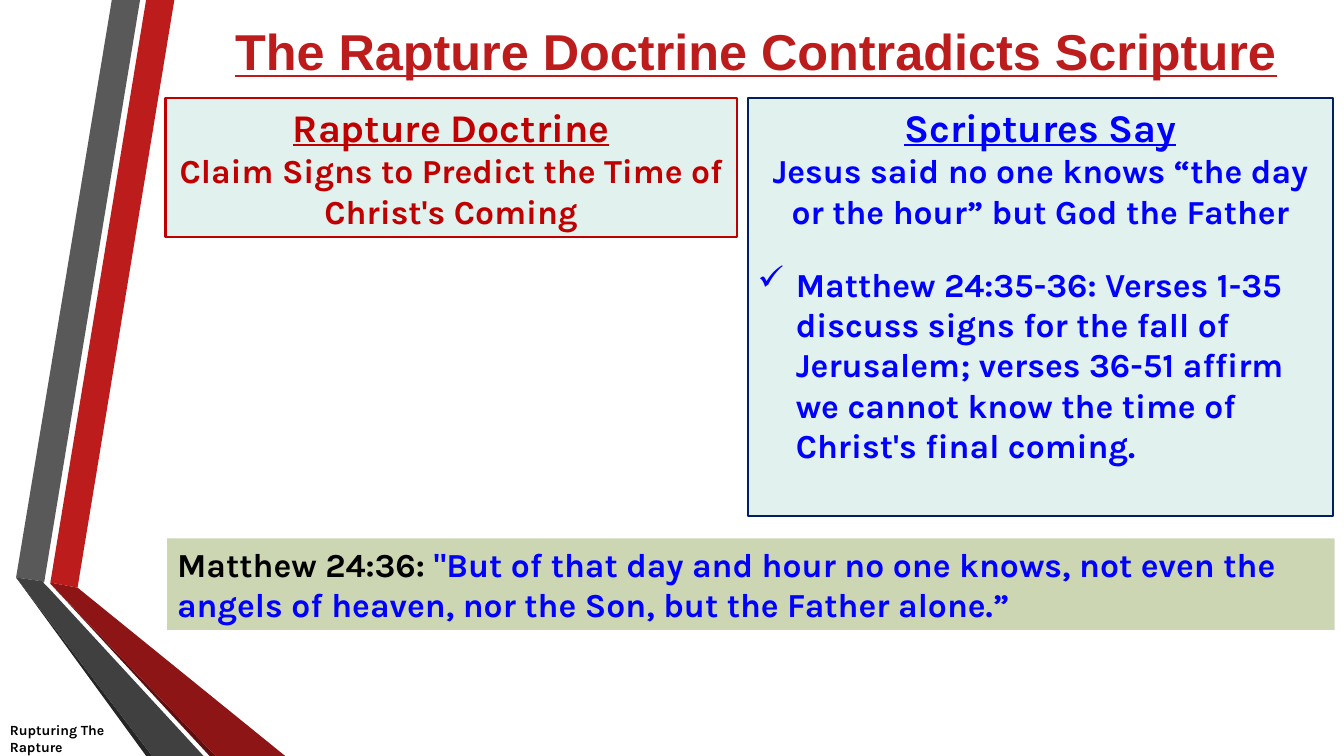
from lxml import etree
from pptx import Presentation
from pptx.dml.color import RGBColor
from pptx.enum.shapes import MSO_SHAPE
from pptx.enum.text import MSO_ANCHOR, PP_ALIGN
from pptx.oxml.ns import qn
from pptx.util import Inches, Pt

RECT = MSO_SHAPE.RECTANGLE
LEFT, CENTER = PP_ALIGN.LEFT, PP_ALIGN.CENTER
TOP, MIDDLE = MSO_ANCHOR.TOP, MSO_ANCHOR.MIDDLE

# Grid of 160 columns by 90 rows
COLS, ROWS = 160, 90
CELL = Inches(13.3333) / COLS

RED, DEEP, BLUE, NAVY = "BC1C1C", "C00000", "0000FF", "002060"
MINT, OLIVE, BLACK = "E1F1ED", "9BAF68", "000000"

# Ribbon bands: fill and corners in grid cells
BANDS = [
    (RED, [(6, 69.36), (9.24, 69.96), (20.76, 0), (17.4, 0)]),
    ("595959", [(16.68, 0), (13.32, 0), (1.92, 68.76), (5.28, 69.24)]),
    ("262626", [(1.92, 68.76), (17.4, 90), (18.12, 90)]),
    ("5E0E0E", [(6, 69.48), (24.96, 90), (25.68, 90)]),
    ("8D1515", [(6, 69.48), (25.68, 90), (33.96, 90), (9.24, 69.96),
                (6, 69.36)]),
    ("404040", [(24.24, 90), (5.76, 69.96), (5.16, 69.36), (5.28, 69.24),
                (1.92, 68.76), (18.12, 90)]),
]


def grid(*cells):
    return [round(c * CELL) for c in cells]


def color(code):
    return RGBColor.from_string(code)


def paint(shape, fill, line=None):
    shape.shadow.inherit = False
    shape.fill.solid()
    shape.fill.fore_color.rgb = color(fill)
    if line:
        shape.line.color.rgb = color(line)
        shape.line.width = Pt(1.5)
    else:
        shape.line.fill.background()


def style(run, size, tint, under=False, face="Karla"):
    font = run.font
    font.name, font.size, font.bold = face, Pt(size), True
    font.underline = under
    font.color.rgb = color(tint)


def write(shape, lines, size, tint, align=LEFT, anchor=TOP):
    frame = shape.text_frame
    frame.word_wrap = True
    frame.vertical_anchor = anchor
    frame.text = "\n".join(lines)
    for para in frame.paragraphs:
        para.alignment = align
        for run in para.runs:
            style(run, size, tint)
    return frame.paragraphs


def add_band(slide, fill, points):
    first, *rest = [grid(*point) for point in points]
    pen = slide.shapes.build_freeform(*first)
    pen.add_line_segments(rest, close=True)
    paint(pen.convert_to_shape(), fill)


def add_card(slide, place, line, tint, lines):
    """Add a bordered card whose first line is an underlined heading."""
    card = slide.shapes.add_shape(RECT, *grid(*place))
    paint(card, MINT, line)
    paras = write(card, lines, 24, tint, CENTER)
    style(paras[0].runs[0], 28, tint, under=True)
    return paras


def add_check(para):
    para.alignment = LEFT
    para.space_before = Pt(23.4)
    props = para._p.get_or_add_pPr()
    props.set("marL", str(Inches(0.38)))
    props.set("indent", str(-Inches(0.38)))
    etree.SubElement(props, qn("a:buChar")).set("char", "✓")


def add_quote(slide, place, source, words):
    bar = slide.shapes.add_shape(RECT, *grid(*place))
    paint(bar, OLIVE)
    tone = bar._element.spPr.find(qn("a:solidFill"))[0]
    etree.SubElement(tone, qn("a:alpha")).set("val", "50000")
    para = write(bar, [source], 24, BLACK)[0]
    run = para.add_run()
    run.text = words
    style(run, 24, BLUE)


def add_title(slide, place, text):
    title = slide.shapes.title
    title.left, title.top, title.width, title.height = grid(*place)
    para = write(title, [text], 36, RED, CENTER, MIDDLE)[0]
    style(para.runs[0], 36, RED, under=True, face="Arial")


def add_label(slide, place, lines):
    box = slide.shapes.add_textbox(*grid(*place))
    write(box, lines, 10, BLACK, anchor=MIDDLE)


def main():
    deck = Presentation()
    deck.slide_width, deck.slide_height = grid(COLS, ROWS)
    slide = deck.slides.add_slide(deck.slide_layouts[5])

    # Ribbon on the left
    for fill, points in BANDS:
        add_band(slide, fill, points)

    # Title and corner label
    add_title(slide, (20, 0, 140, 12),
              "The Rapture Doctrine Contradicts Scripture")
    add_label(slide, (0, 85.8, 120, 4.2), ["Rupturing The", "Rapture"])

    # Claim against scripture
    add_card(slide, (19.7, 11.7, 68, 16.5), DEEP, DEEP, [
        "Rapture Doctrine",
        "Claim Signs to Predict the Time of Christ's Coming"])
    paras = add_card(slide, (89, 11.7, 69.7, 49.7), NAVY, BLUE, [
        "Scriptures Say",
        "Jesus said no one knows “the day or the hour” but God the Father",
        "Matthew 24:35-36: Verses 1-35 discuss signs for the fall of "
        "Jerusalem; verses 36-51 affirm we cannot know the time of "
        "Christ's final coming."])
    add_check(paras[-1])

    # Quoted verse
    add_quote(slide, (19.9, 64.1, 139, 10.9), "Matthew 24:36: ",
              '"But of that day and hour no one knows, not even the '
              'angels of heaven, nor the Son, but the Father alone.”')

    deck.save("out.pptx")


if __name__ == "__main__":
    main()
